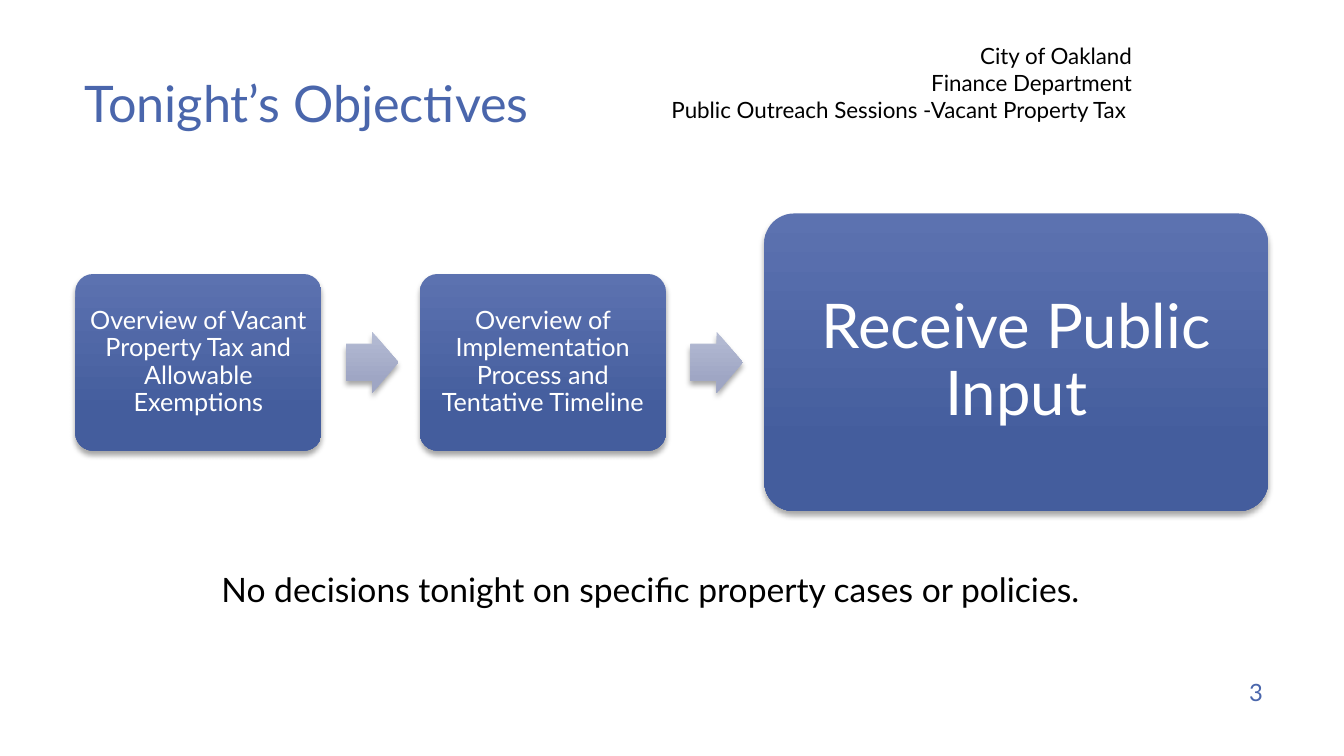
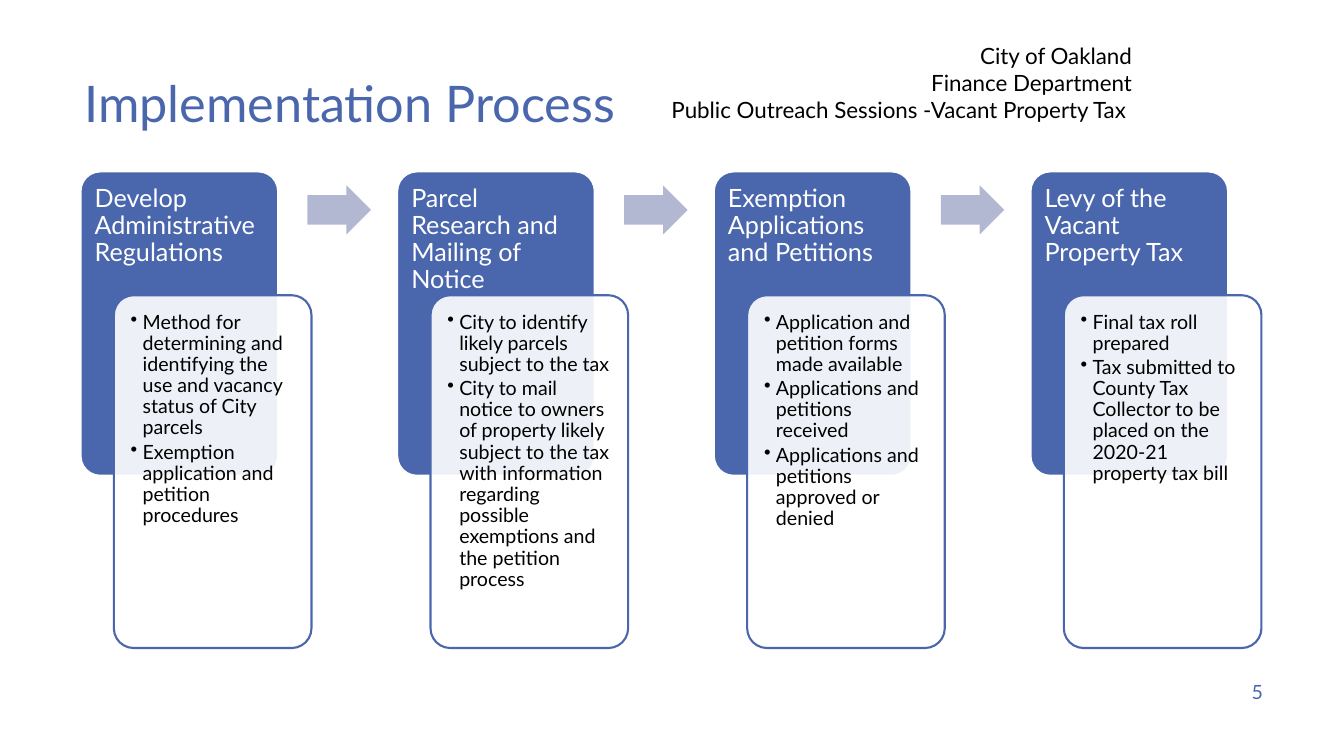
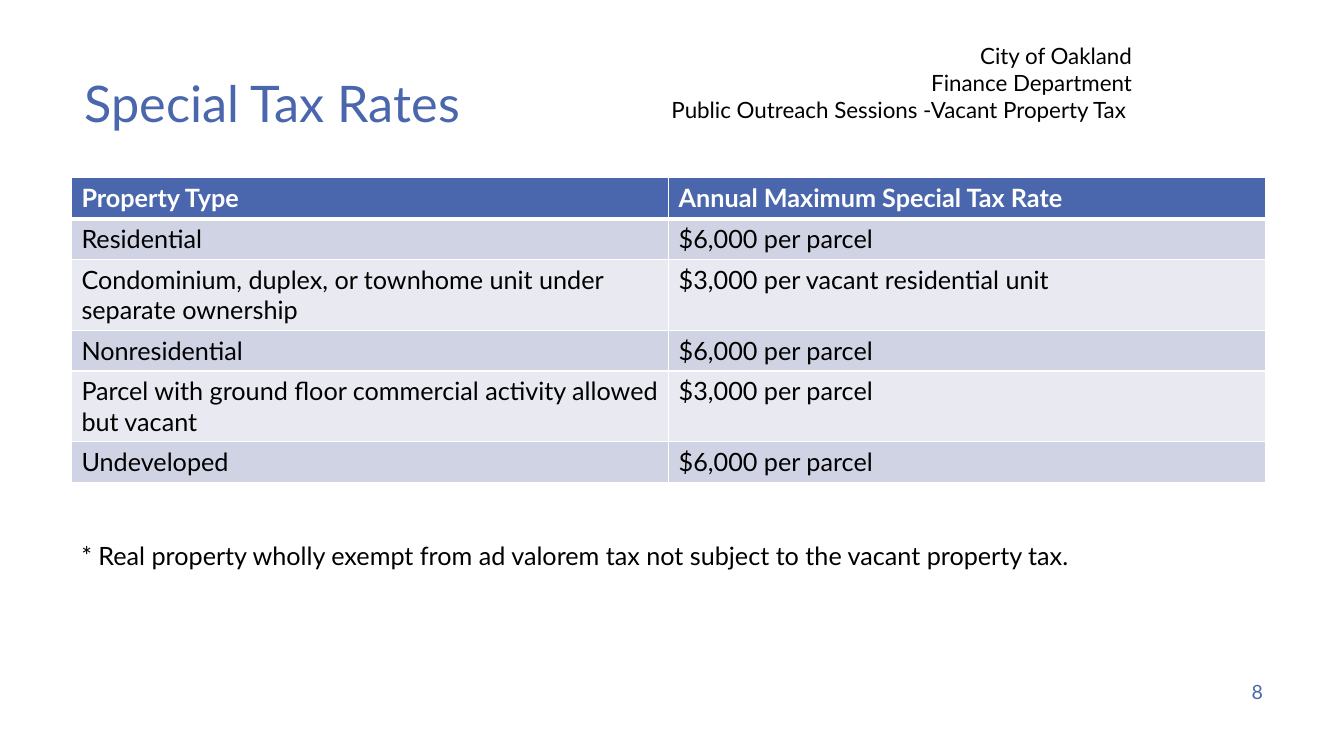
from lxml.etree import SubElement
from pptx import Presentation
from pptx.dml.color import RGBColor
from pptx.enum.shapes import MSO_SHAPE
from pptx.enum.text import MSO_ANCHOR, PP_ALIGN
from pptx.oxml.ns import qn
from pptx.util import Cm, Pt

COLORS = {
    "blue": "4A66AC",
    "blue_top": "5C72B0",
    "blue_bottom": "445D9D",
    "arrow": "B2B8D2",
    "arrow_top": "B5BCD4",
    "arrow_bottom": "9FA6C4",
    "band_dark": "D0D3E3",
    "band_light": "E9EAF1",
    "white": "FFFFFF",
    "black": "000000",
}
FONT = "Lato"
ROUNDED = MSO_SHAPE.ROUNDED_RECTANGLE
ARROW = MSO_SHAPE.RIGHT_ARROW
ADJUSTMENTS = {ROUNDED: [0.1], ARROW: [0.6, 0.5]}


def write(frame, text, size=18, color="black", bold=False, align=PP_ALIGN.LEFT,
          anchor=MSO_ANCHOR.TOP, spacing=None, after=0, bullet=False, margins=None):
    frame.word_wrap = True
    frame.vertical_anchor = anchor
    if margins:
        sides = ("left", "top", "right", "bottom")
        for side, margin in zip(sides, margins):
            setattr(frame, f"margin_{side}", Cm(margin))
    for index, line in enumerate(text.split("\n")):
        para = frame.add_paragraph() if index else frame.paragraphs[0]
        para.alignment = align
        para.space_after = Pt(after)
        if spacing:
            para.line_spacing = spacing
        if bullet:
            properties = para._p.get_or_add_pPr()
            properties.set("marL", str(Cm(0.3)))
            properties.set("indent", str(Cm(-0.3)))
            SubElement(properties, qn("a:buChar"), char="•")
        span = para.add_run()
        span.text = line
        span.font.name = FONT
        span.font.size = Pt(size)
        span.font.bold = bold
        span.font.color.rgb = RGBColor.from_string(COLORS[color])


def add_block(page, kind, place, fills, outline=None, opacity=100):
    block = page.shapes.add_shape(kind, *map(Cm, place))
    for index, value in enumerate(ADJUSTMENTS[kind]):
        block.adjustments[index] = value
    block.shadow.inherit = False
    if len(fills) == 2:
        block.fill.gradient()
        block.fill.gradient_angle = 270
        for stop, name, position in zip(block.fill.gradient_stops, fills, (0, 0.78)):
            stop.color.rgb = RGBColor.from_string(COLORS[name])
            stop.position = position
        effects = block._element.spPr.find(qn("a:effectLst"))
        shadow = SubElement(effects, qn("a:outerShdw"), blurRad=str(Pt(4)),
                            dist=str(Pt(3)), dir="5400000", rotWithShape="0")
        shade = SubElement(shadow, qn("a:srgbClr"), val=COLORS["black"])
        SubElement(shade, qn("a:alpha"), val="35000")
    else:
        block.fill.solid()
        block.fill.fore_color.rgb = RGBColor.from_string(COLORS[fills[0]])
        if opacity < 100:
            tint = block._element.spPr.find(qn("a:solidFill")).find(qn("a:srgbClr"))
            SubElement(tint, qn("a:alpha"), val=str(opacity * 1000))
    if outline:
        block.line.color.rgb = RGBColor.from_string(COLORS[outline])
        block.line.width = Pt(1.5)
    else:
        block.line.fill.background()
    return block


deck = Presentation()
deck.slide_width = Cm(33.87)
deck.slide_height = Cm(19.05)

HEADER = "City of Oakland\nFinance Department\nPublic Outreach Sessions -Vacant Property Tax "
pages = []
for title, number, number_size in [
    ("Tonight’s Objectives", "3", 17),
    ("Implementation Process", "5", 14),
    ("Special Tax Rates", "8", 14),
]:
    page = deck.slides.add_slide(deck.slide_layouts[6])
    box = page.shapes.add_textbox(Cm(1.88), Cm(1.7), Cm(23.88), Cm(3.66))
    write(box.text_frame, title, size=36, color="blue")
    box = page.shapes.add_textbox(Cm(16.31), Cm(0.94), Cm(12.47), Cm(2.31))
    write(box.text_frame, HEADER, size=16, align=PP_ALIGN.RIGHT)
    box = page.shapes.add_textbox(Cm(30.18), Cm(16.92), Cm(1.9), Cm(1.02))
    write(box.text_frame, number, size=number_size, color="blue",
          align=PP_ALIGN.RIGHT, anchor=MSO_ANCHOR.MIDDLE)
    pages.append(page)
objectives, process, rates = pages

MIDDLE = 9.13
left = 1.9
for text, width, height, size, margin in [
    ("Overview of Vacant Property Tax and Allowable Exemptions", 6.2, 4.45, 18, 0.18),
    ("Overview of Implementation Process and Tentative Timeline", 6.2, 4.45, 18, 0.18),
    ("Receive Public Input", 12.7, 7.5, 44, 0.46),
]:
    if left > 1.9:
        add_block(objectives, ARROW, (left - 1.86, MIDDLE - 0.77, 1.32, 1.54),
                  ["arrow_top", "arrow_bottom"])
    step = add_block(objectives, ROUNDED, (left, MIDDLE - height / 2, width, height),
                     ["blue_top", "blue_bottom"])
    write(step.text_frame, text, size=size, color="white", align=PP_ALIGN.CENTER,
          anchor=MSO_ANCHOR.MIDDLE, spacing=0.9, margins=[margin] * 4)
    left += width + 2.48

box = objectives.shapes.add_textbox(Cm(5.33), Cm(14.2), Cm(23.19), Cm(1.27))
write(box.text_frame, "No decisions tonight on specific property cases or policies.", size=24)

stages = [
    ("Develop Administrative Regulations",
     "Method for determining and identifying the use and vacancy status of City parcels\n"
     "Exemption application and petition procedures"),
    ("Parcel Research and Mailing of Notice",
     "City to identify likely parcels subject to the tax\n"
     "City to mail notice to owners of property likely subject to the tax with "
     "information regarding possible exemptions and the petition process"),
    ("Exemption Applications and Petitions",
     "Application and petition forms made available\n"
     "Applications and petitions received\n"
     "Applications and petitions approved or denied"),
    ("Levy of the Vacant Property Tax",
     "Final tax roll prepared\n"
     "Tax submitted to County Tax Collector to be placed on the 2020-21 property tax bill"),
]
for index, (heading, details) in enumerate(stages):
    left = 2.03 + index * 7.98
    stage = add_block(process, ROUNDED, (left, 4.32, 4.98, 7.67), ["blue"], outline="white")
    write(stage.text_frame, heading, color="white", spacing=0.9,
          margins=[0.21, 0.21, 0.21, 0.18])
    card = add_block(process, ROUNDED, (left + 0.84, 7.44, 4.98, 8.89), ["white"],
                     outline="blue", opacity=90)
    write(card.text_frame, details, size=14, spacing=0.9, after=2.1, bullet=True,
          margins=[0.28] * 4)
    if index < len(stages) - 1:
        add_block(process, ARROW, (left + 5.72, 4.67, 1.6, 1.24), ["arrow"])

rows = [
    ("Property Type", "Annual Maximum Special Tax Rate"),
    ("Residential", "$6,000 per parcel"),
    ("Condominium, duplex, or townhome unit under separate ownership",
     "$3,000 per vacant residential unit"),
    ("Nonresidential", "$6,000 per parcel"),
    ("Parcel with ground floor commercial activity allowed but vacant", "$3,000 per parcel"),
    ("Undeveloped", "$6,000 per parcel"),
]
table = rates.shapes.add_table(len(rows), 2, Cm(1.8), Cm(4.48), Cm(30.1), Cm(6.18)).table
table.horz_banding = False
for row_index, row in enumerate(rows):
    table.rows[row_index].height = Cm(1.03)
    is_header = row_index == 0
    fill = "blue" if is_header else ("band_light", "band_dark")[row_index % 2]
    for column_index, text in enumerate(row):
        cell = table.cell(row_index, column_index)
        properties = cell._tc.get_or_add_tcPr()
        for side in "LRTB":
            thick = (side == "B" and is_header) or (side == "T" and row_index == 1)
            border = SubElement(properties, qn(f"a:ln{side}"), w=str(Pt(3 if thick else 1)))
            SubElement(SubElement(border, qn("a:solidFill")), qn("a:srgbClr"),
                       val=COLORS["white"])
        cell.fill.solid()
        cell.fill.fore_color.rgb = RGBColor.from_string(COLORS[fill])
        write(cell.text_frame, text, color="white" if is_header else "black", bold=is_header)

box = rates.shapes.add_textbox(Cm(1.8), Cm(13.5), Cm(30.1), Cm(1.03))
write(box.text_frame,
      "* Real property wholly exempt from ad valorem tax not subject to the vacant property tax.")

deck.save("out.pptx")
